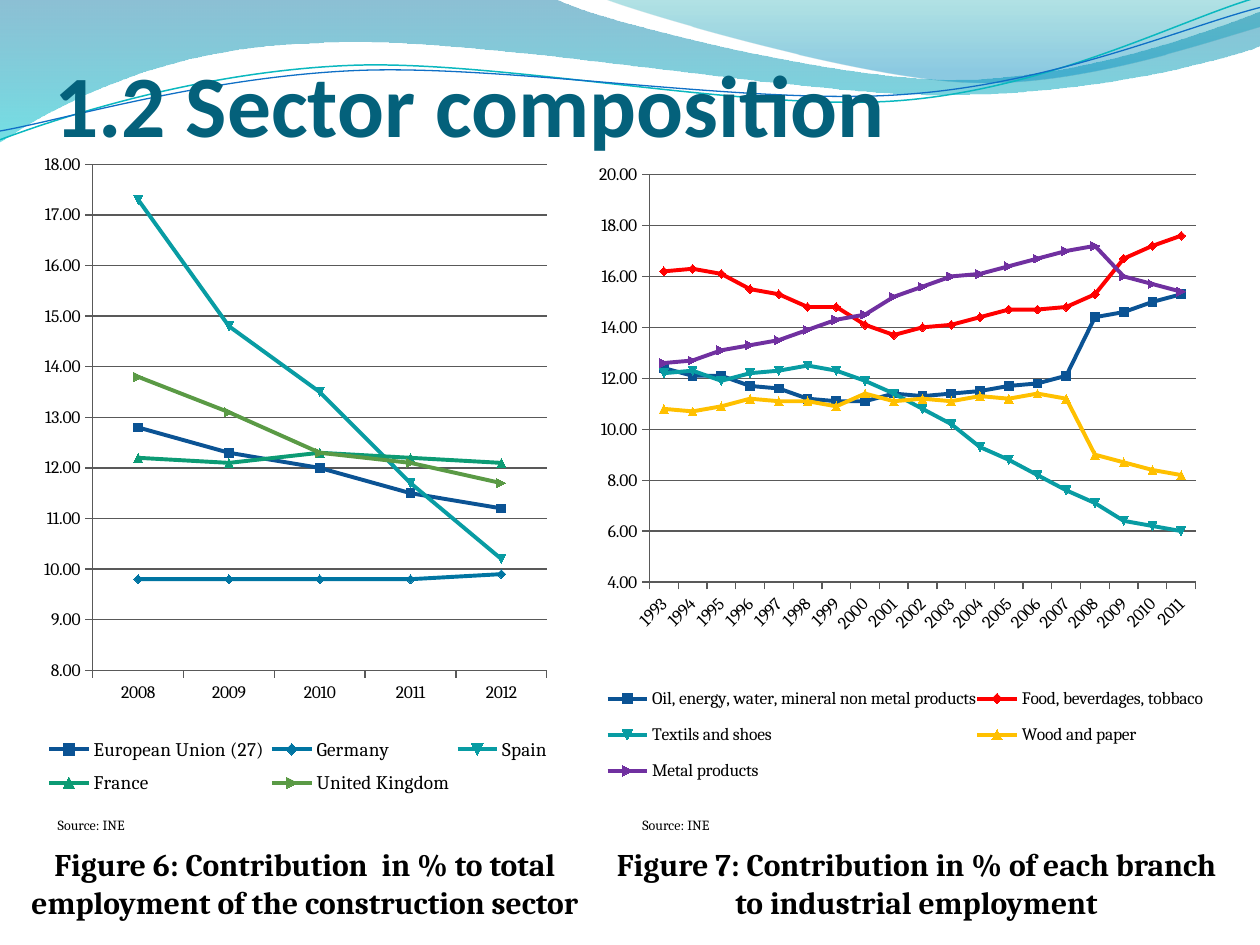
import math

import pptx
import pptx.chart.data
import pptx.dml.color
import pptx.enum.chart
import pptx.enum.text
import pptx.oxml
import pptx.oxml.ns
import pptx.util
from lxml import etree

Inches = pptx.util.Inches
Pt = pptx.util.Pt
ALIGN = pptx.enum.text.PP_ALIGN
ANCHOR = pptx.enum.text.MSO_ANCHOR
qn = pptx.oxml.ns.qn


def color(hex_value):
    return pptx.dml.color.RGBColor.from_string(hex_value)


def apply(target, values):
    for name, value in values.items():
        setattr(target, name, value)


def turn(point, degrees, pivot):
    angle = math.radians(degrees)
    x, y = point[0] - pivot[0], point[1] - pivot[1]
    return (pivot[0] + x * math.cos(angle) - y * math.sin(angle),
            pivot[1] + x * math.sin(angle) + y * math.cos(angle))


def set_layout(parent, index, box, inner=False):
    """Place a plot area or legend at x, y, w, h as parts of the chart."""
    for old in parent.findall(qn("c:layout")):
        parent.remove(old)
    layout = etree.Element(qn("c:layout"))
    manual = etree.SubElement(layout, qn("c:manualLayout"))
    settings = [("layoutTarget", "inner")] if inner else []
    settings += [("xMode", "edge"), ("yMode", "edge"), *zip("xywh", box)]
    for tag, value in settings:
        etree.SubElement(manual, qn("c:" + tag)).set("val", str(value))
    parent.insert(index, layout)


class SlideStyle:
    heading_font, body_font = "Calibri", "Cambria"
    heading, text, grid = "04617B", "000000", "595959"

    def __init__(self, slide):
        self.slide = slide

    def font(self, font, size, bold=False, name=None, ink=None):
        apply(font, {"name": name or self.body_font, "size": Pt(size), "bold": bold})
        font.color.rgb = color(ink or self.text)

    def freeform(self, start, pieces, closed):
        """Outline of pieces with one point (line) or three points (curve)."""
        points = [tuple(map(Inches, p)) for piece in ([start], *pieces) for p in piece]
        builder = self.slide.shapes.build_freeform(*points[0])
        builder.add_line_segments(points[1:], close=closed)
        shape = builder.convert_to_shape()
        shape.shadow.inherit = False
        segments = iter(list(shape._element.iter(qn("a:lnTo"))))
        for piece in pieces:
            first, *others = [next(segments) for _ in piece]
            if others:
                curve = etree.Element(qn("a:cubicBezTo"))
                first.addprevious(curve)
                for segment in (first, *others):
                    curve.append(segment[0])
                    segment.getparent().remove(segment)
        return shape

    def wave(self, start, pieces, stops):
        """Filled band; stops are (position, colour, opacity in %)."""
        band = self.freeform(start, pieces, True)
        band.line.fill.background()
        band.fill.gradient()
        band.fill.gradient_angle = 270
        for stop, (position, hex_value, _) in zip(band.fill.gradient_stops, stops):
            stop.position = position
            stop.color.rgb = color(hex_value)
        for rgb, (_, _, opacity) in zip(band._element.spPr.iter(qn("a:srgbClr")), stops):
            etree.SubElement(rgb, qn("a:alpha")).set("val", str(opacity * 1000))

    def ripple(self, start, pieces, hex_value, width, tilt=-2.7, pivot=(5, 0.58)):
        """Open curve, drawn level and then tilted as a whole."""
        level = [[turn(p, -tilt, pivot) for p in piece] for piece in pieces]
        curve = self.freeform(turn(start, -tilt, pivot), level, False)
        curve.rotation = tilt
        curve.fill.background()
        curve.line.color.rgb = color(hex_value)
        curve.line.width = Pt(width)

    def title(self, words, box):
        title = self.slide.shapes.title
        self.slide.shapes._spTree.append(title._element)  # in front of the waves
        apply(title, dict(zip(("left", "top", "width", "height"), map(Inches, box))))
        frame = title.text_frame
        apply(frame, {"text": words, "vertical_anchor": ANCHOR.BOTTOM,
                      "margin_left": 0, "margin_right": 0,
                      "margin_top": Inches(0.05), "margin_bottom": 0})
        frame.paragraphs[0].alignment = ALIGN.LEFT
        self.font(frame.paragraphs[0].runs[0].font, 50, True, self.heading_font, self.heading)

    def label(self, lines, box, size, bold=False, align=ALIGN.LEFT, wrap=False):
        frame = self.slide.shapes.add_textbox(*map(Inches, box)).text_frame
        apply(frame, {"text": "\n".join(lines), "word_wrap": wrap})
        for paragraph in frame.paragraphs:
            paragraph.alignment = align
            self.font(paragraph.runs[0].font, size, bold)

    def line_chart(self, box, years, series, scale, plot_box, legend_box, legend_size):
        """series maps a name to (colour, values); scale is min, max, step."""
        data = pptx.chart.data.CategoryChartData(number_format="0.00")
        data.categories = [str(year) for year in years]
        for name, (_, values) in series.items():
            data.add_series(name, values)
        chart = self.slide.shapes.add_chart(
            pptx.enum.chart.XL_CHART_TYPE.LINE_MARKERS, *map(Inches, box), data).chart
        self.font(chart.font, 10)
        apply(chart, {"has_title": False, "has_legend": True})
        apply(chart.legend, {"position": pptx.enum.chart.XL_LEGEND_POSITION.BOTTOM,
                             "include_in_layout": False})
        self.font(chart.legend.font, legend_size)

        values_axis, years_axis = chart.value_axis, chart.category_axis
        apply(values_axis, dict(zip(("minimum_scale", "maximum_scale", "major_unit"), scale)))
        values_axis.has_major_gridlines = True
        apply(values_axis.tick_labels, {"number_format": "0.00",
                                        "number_format_is_linked": False})
        for axis in (values_axis, years_axis):
            axis.major_tick_mark = pptx.enum.chart.XL_TICK_MARK.OUTSIDE
        for ruled in (values_axis, years_axis, values_axis.major_gridlines):
            ruled.format.line.color.rgb = color(self.grid)
            ruled.format.line.width = Pt(0.75)

        chart.plots[0].vary_by_categories = False
        for drawn, (hex_value, _) in zip(chart.plots[0].series, series.values()):
            drawn.smooth = False
            drawn.format.line.color.rgb = color(hex_value)
            drawn.format.line.width = Pt(2.25)
            drawn.marker.size = 5
            drawn.marker.format.fill.solid()
            drawn.marker.format.fill.fore_color.rgb = color(hex_value)
            drawn.marker.format.line.color.rgb = color(hex_value)
        set_layout(chart._chartSpace.find(".//" + qn("c:plotArea")), 0, plot_box, True)
        set_layout(chart.legend._element, 1, legend_box)


EMPLOYMENT = {
    "European Union (27)": ("0B5394", [12.8, 12.3, 12, 11.5, 11.2]),
    "Germany": ("0075A2", [9.8, 9.8, 9.8, 9.8, 9.9]),
    "Spain": ("089CA3", [17.3, 14.8, 13.5, 11.7, 10.2]),
    "France": ("0C9B74", [12.2, 12.1, 12.3, 12.2, 12.1]),
    "United Kingdom": ("5A9A45", [13.8, 13.1, 12.3, 12.1, 11.7]),
}
BRANCHES = {
    "Oil, energy, water, mineral non metal products": ("0B5394", [
        12.4, 12.1, 12.1, 11.7, 11.6, 11.2, 11.1, 11.1, 11.4, 11.3,
        11.4, 11.5, 11.7, 11.8, 12.1, 14.4, 14.6, 15, 15.3]),
    "Food, beverdages, tobbaco": ("FF0000", [
        16.2, 16.3, 16.1, 15.5, 15.3, 14.8, 14.8, 14.1, 13.7, 14,
        14.1, 14.4, 14.7, 14.7, 14.8, 15.3, 16.7, 17.2, 17.6]),
    "Textils and shoes": ("089CA3", [
        12.2, 12.3, 11.9, 12.2, 12.3, 12.5, 12.3, 11.9, 11.4, 10.8,
        10.2, 9.3, 8.8, 8.2, 7.6, 7.1, 6.4, 6.2, 6]),
    "Wood and paper": ("FFC000", [
        10.8, 10.7, 10.9, 11.2, 11.1, 11.1, 10.9, 11.4, 11.1, 11.2,
        11.1, 11.3, 11.2, 11.4, 11.2, 9, 8.7, 8.4, 8.2]),
    "Metal products": ("7030A0", [
        12.6, 12.7, 13.1, 13.3, 13.5, 13.9, 14.3, 14.5, 15.2, 15.6,
        16, 16.1, 16.4, 16.7, 17, 17.2, 16, 15.7, 15.4]),
}


def main():
    deck = pptx.Presentation()
    apply(deck, {"slide_width": Inches(10), "slide_height": Inches(7.5)})
    page = SlideStyle(deck.slides.add_slide(deck.slide_layouts[5]))

    page.wave((0, 0), [[(4.4, -0.01)], [(4.76, 0.17), (6.64, 0.63), (7.58, 0.63)],
                       [(8.53, 0.63), (9.58, 0.26), (10, 0.09)], [(10.01, 0.36)],
                       [(9.83, 0.44), (8.7, 0.76), (7.46, 0.75)],
                       [(6.22, 0.75), (3.82, 0.28), (2.57, 0.34)],
                       [(1.29, 0.36), (0.46, 0.83), (-0.01, 1.13)]],
              [(0, "0074A1", 45), (1, "00C6CF", 55)])
    page.wave((4.79, -0.01), [[(5.09, 0.11), (6.82, 0.62), (7.69, 0.65)],
                              [(8.56, 0.69), (9.61, 0.32), (10, 0.21)], [(10, 0)]],
              [(0, "00A1A9", 30), (0.8, "008BBF", 45)])
    page.ripple((0, 1.11), [[(0.48, 0.93), (1.58, 0.57), (2.77, 0.52)],
                            [(3.95, 0.47), (5.93, 0.89), (7.13, 0.8)],
                            [(8.33, 0.71), (9.38, 0.15), (9.98, -0.02)]], "0AB8BF", 0.85)
    page.ripple((0, 1.04), [[(0.47, 0.96), (1.64, 0.61), (2.83, 0.56)],
                            [(4.03, 0.51), (5.97, 0.84), (7.17, 0.75)],
                            [(8.36, 0.67), (9.41, 0.21), (10, 0.06)]], "0F6FC6", 0.75)

    page.title("1.2 Sector composition", (0.43, 0.13, 9, 1.1))
    page.line_chart((0.2, 1.15, 4.29, 5.51), range(2008, 2013), EMPLOYMENT, (8, 18, 1),
                    (0.125, 0.028, 0.84, 0.729), (0.03, 0.84, 0.95, 0.11), 11)
    page.label(["Figure 6: Contribution  in % to total employment of the construction sector"],
               (0, 6.66, 4.84, 0.71), 18, True, ALIGN.CENTER, True)
    page.label(["Figure 7: Contribution in % of each branch", "to industrial employment"],
               (4.67, 6.66, 5.21, 0.71), 18, True, ALIGN.CENTER)
    page.line_chart((4.61, 1.23, 5, 5.2), range(1993, 2012), BRANCHES, (4, 20, 2),
                    (0.109, 0.03, 0.867, 0.622), (0.04, 0.79, 0.95, 0.19), 10)
    for left in (5, 0.36):
        page.label(["Source: INE"], (left, 6.43, 0.78, 0.24), 8)
    deck.save("out.pptx")


if __name__ == "__main__":
    main()
